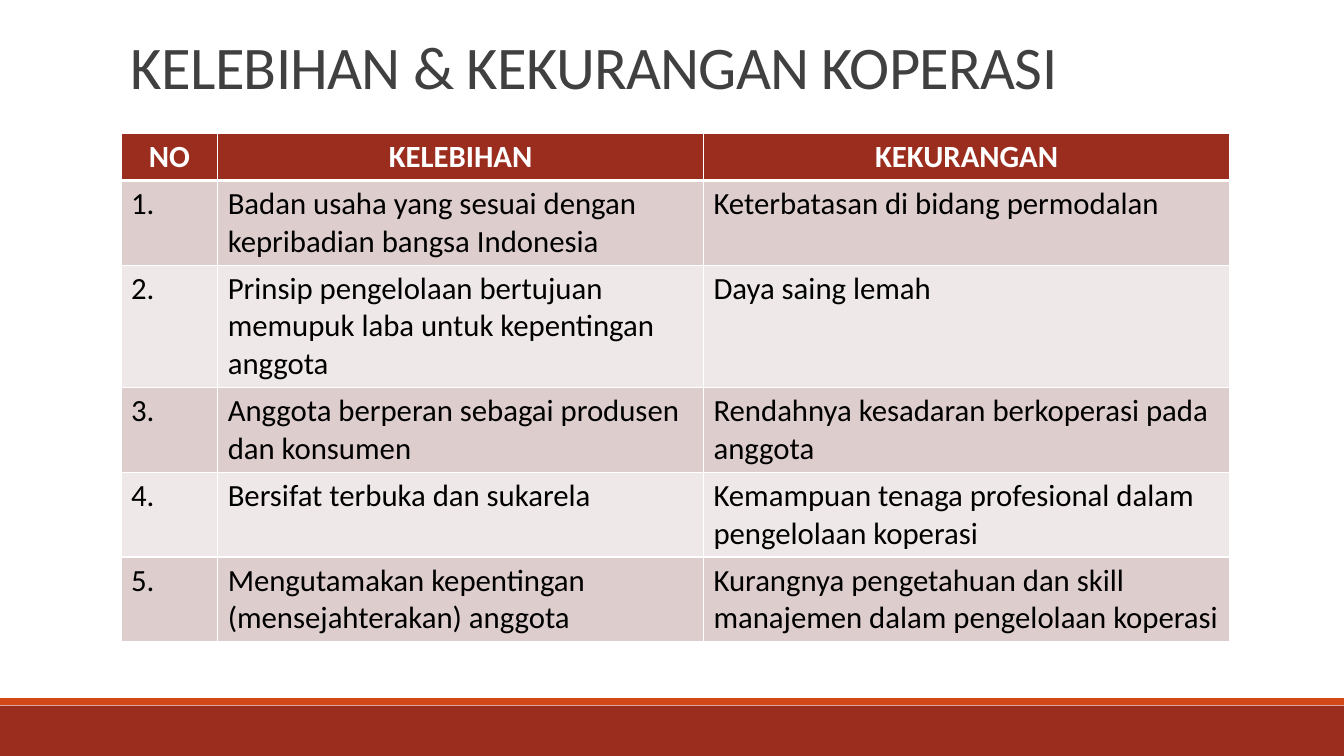
from lxml import etree
from pptx import Presentation
from pptx import util as u
from pptx.dml.color import RGBColor
from pptx.enum import shapes, text
from pptx.oxml import ns

COLORS = {
    "white": "FFFFFF", "black": "000000", "title": "404040",
    "header": "9B2D1F", "accent": "D34817",
    "odd": "DECDCD", "even": "EFE8E8",
}
HEADINGS = ("NO", "KELEBIHAN", "KEKURANGAN")
POINTS = [
    ("Badan usaha yang sesuai dengan kepribadian bangsa Indonesia",
     "Keterbatasan di bidang permodalan"),
    ("Prinsip pengelolaan bertujuan memupuk laba untuk kepentingan anggota",
     "Daya saing lemah"),
    ("Anggota berperan sebagai produsen dan konsumen",
     "Rendahnya kesadaran berkoperasi pada anggota"),
    ("Bersifat terbuka dan sukarela",
     "Kemampuan tenaga profesional dalam pengelolaan koperasi"),
    ("Mengutamakan kepentingan (mensejahterakan) anggota",
     "Kurangnya pengetahuan dan skill manajemen dalam pengelolaan koperasi"),
]
COLUMN_WIDTHS = (69, 347, 376)
ROW_HEIGHTS = (33.5, 60.5, 87.5, 60.5, 60.5, 60.5)


def color(name):
    return RGBColor.from_string(COLORS[name])


class SlideBuilder:
    font = "Calibri"

    def __init__(self, slide):
        self.slide = slide

    def add_run(self, paragraph, content, size, color_name, bold=False, spacing=0):
        run = paragraph.add_run()
        run.text = content
        run.font.name = self.font
        run.font.size = u.Pt(size)
        run.font.bold = bold
        run.font.color.rgb = color(color_name)
        if spacing:
            run._r.get_or_add_rPr().set("spc", str(int(spacing * 100)))

    def bar(self, top, height, color_name):
        shape = self.slide.shapes.add_shape(
            shapes.MSO_SHAPE.RECTANGLE, 0, u.Pt(top), u.Pt(960), u.Pt(height))
        shape.shadow.inherit = False
        shape.fill.solid()
        shape.fill.fore_color.rgb = color(color_name)
        shape.line.fill.background()

    def title(self, content, left, top, width, height):
        shape = self.slide.shapes.add_textbox(
            u.Pt(left), u.Pt(top), u.Pt(width), u.Pt(height))
        frame = shape.text_frame
        frame.word_wrap = True
        frame.vertical_anchor = text.MSO_ANCHOR.BOTTOM
        paragraph = frame.paragraphs[0]
        paragraph.line_spacing = 0.85
        self.add_run(paragraph, content, 43.2, "title", spacing=-0.5)

    def borders(self, cell, top, bottom):
        properties = cell._tc.get_or_add_tcPr()
        for side, width in (("L", 1), ("R", 1), ("T", top), ("B", bottom)):
            line = etree.SubElement(properties, ns.qn(f"a:ln{side}"), w=str(u.Pt(width)))
            fill = etree.SubElement(line, ns.qn("a:solidFill"))
            etree.SubElement(fill, ns.qn("a:srgbClr"), val=COLORS["white"])

    def cell(self, cell, content, row):
        is_header = row == 0
        self.borders(cell, top=3 if row == 1 else 1, bottom=3 if is_header else 1)
        cell.fill.solid()
        fill_name = "header" if is_header else ("even", "odd")[row % 2]
        cell.fill.fore_color.rgb = color(fill_name)
        paragraph = cell.text_frame.paragraphs[0]
        if is_header:
            paragraph.alignment = text.PP_ALIGN.CENTER
        self.add_run(paragraph, content, 22, "white" if is_header else "black", is_header)

    def table(self, rows, left, top, widths, heights):
        table = self.slide.shapes.add_table(
            len(rows), len(widths), u.Pt(left), u.Pt(top),
            u.Pt(sum(widths)), u.Pt(sum(heights))).table
        for column, width in zip(table.columns, widths):
            column.width = u.Pt(width)
        for table_row, height in zip(table.rows, heights):
            table_row.height = u.Pt(height)
        for row, contents in enumerate(rows):
            for column, content in enumerate(contents):
                self.cell(table.cell(row, column), content, row)


def main():
    presentation = Presentation()
    presentation.slide_width = u.Pt(960)
    presentation.slide_height = u.Pt(540)
    builder = SlideBuilder(presentation.slides.add_slide(presentation.slide_layouts[6]))

    # Footer bars
    builder.bar(504, 36, "header")
    builder.bar(498.75, 5, "accent")

    # Title
    builder.title("KELEBIHAN & KEKURANGAN KOPERASI", 86.5, 22.5, 792, 54)

    # Comparison table
    numbered = [(f"{number}.", *point) for number, point in enumerate(POINTS, 1)]
    builder.table([HEADINGS, *numbered], 86.5, 95.25, COLUMN_WIDTHS, ROW_HEIGHTS)

    presentation.save("out.pptx")


if __name__ == "__main__":
    main()
